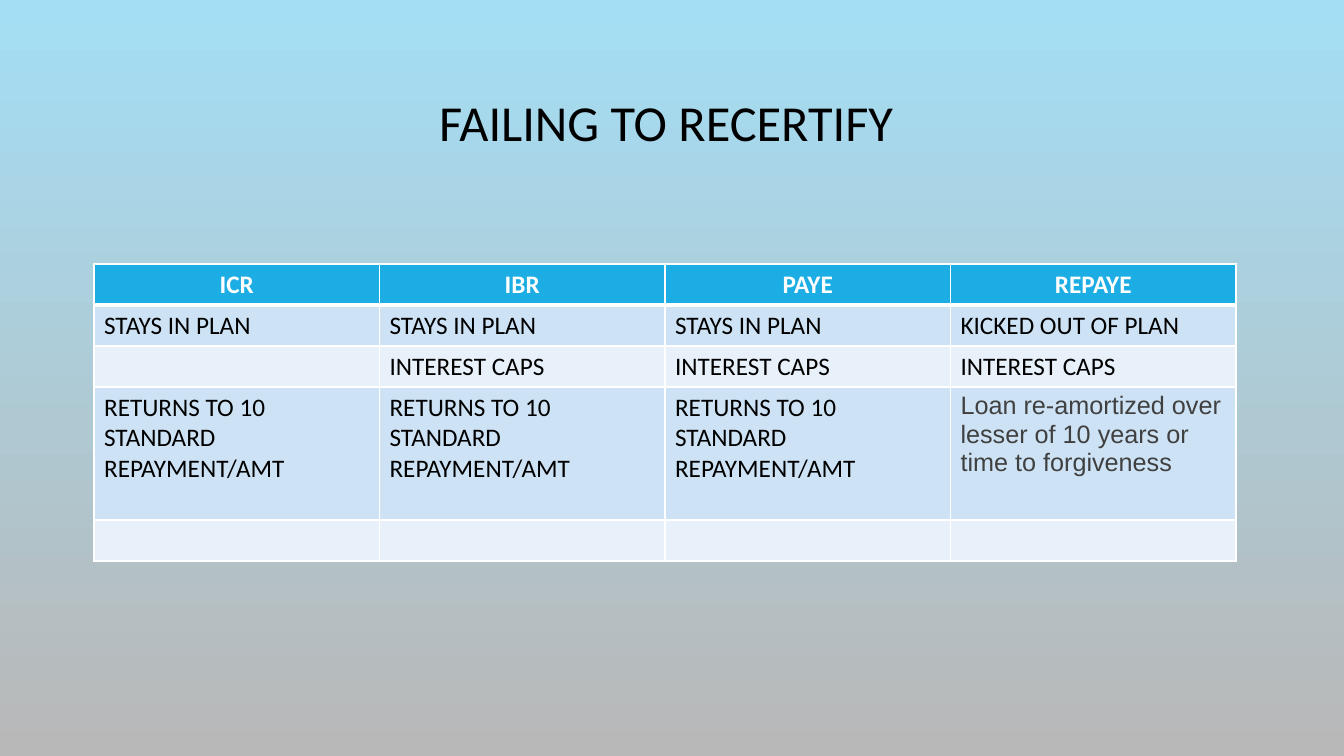
import pptx
import pptx.dml.color
import pptx.enum.text
import pptx.oxml
import pptx.oxml.ns
import pptx.util

THEME = {
    "sky": "A4DEF4", "grey": "B8B8B8", "header": "1CADE4",
    "bands": ("CDE3F5", "E8F1FA"), "white": "FFFFFF", "black": "000000",
    "note": "404040", "font": "Calibri", "note_font": "Arial",
    "title_size": 36, "cell_size": 18,
}
CENTER = pptx.enum.text.PP_ALIGN.CENTER
LEFT = pptx.enum.text.PP_ALIGN.LEFT
PX = 914400 / 100.8
rgb = pptx.dml.color.RGBColor.from_string


def px(*lengths):
    """Turn pixel lengths into EMU."""
    return [pptx.util.Emu(round(length * PX)) for length in lengths]


def write(frame, text, size=THEME["cell_size"], font=THEME["font"],
          color=THEME["black"], bold=False, align=LEFT, spacing=1.0):
    paragraph = frame.paragraphs[0]
    paragraph.alignment = align
    paragraph.line_spacing = spacing
    run = paragraph.add_run()
    run.text = text
    run.font.size = pptx.util.Pt(size)
    run.font.name = font
    run.font.bold = bold
    run.font.color.rgb = rgb(color)


deck = pptx.Presentation()
deck.slide_width, deck.slide_height = px(1344, 756)
slide = deck.slides.add_slide(deck.slide_layouts[5])

backdrop = slide.background.fill
backdrop.gradient()
backdrop.gradient_angle = 270
for stop, color in zip(backdrop.gradient_stops, ("sky", "grey")):
    stop.color.rgb = rgb(THEME[color])

title = slide.shapes.title
title.left, title.top, title.width, title.height = px(101, 69, 1142, 113)
title.text_frame.word_wrap = True
title.text_frame.vertical_anchor = pptx.enum.text.MSO_ANCHOR.MIDDLE
write(title.text_frame, "FAILING TO RECERTIFY ", size=THEME["title_size"],
      align=CENTER, spacing=0.9)

plans = ["ICR", "IBR", "PAYE", "REPAYE"]
standard = "RETURNS TO 10 STANDARD REPAYMENT/AMT"
reamortized = "Loan re-amortized over lesser of 10 years or time to forgiveness"
outcomes = [
    plans,
    ["STAYS IN PLAN"] * 3 + ["KICKED OUT OF PLAN"],
    [""] + ["INTEREST CAPS"] * 3,
    [standard] * 3 + [reamortized],
    [""] * 4,
]
row_heights = px(41, 41, 41, 133, 41)

table = slide.shapes.add_table(
    len(outcomes), len(plans), *px(94, 264, 1142, 297)).table
for row, height in zip(table.rows, row_heights):
    row.height = height

for r, outcome_row in enumerate(outcomes):
    is_header = r == 0
    for c, outcome in enumerate(outcome_row):
        cell = table.cell(r, c)
        properties = cell._tc.get_or_add_tcPr()
        for side in "LRTB":
            heavy = (is_header and side == "B") or (r == 1 and side == "T")
            border = pptx.oxml.parse_xml(
                f'<a:ln{side} {pptx.oxml.ns.nsdecls("a")} '
                f'w="{pptx.util.Pt(3 if heavy else 1)}"><a:solidFill>'
                f'<a:srgbClr val="{THEME["white"]}"/></a:solidFill></a:ln{side}>')
            properties.append(border)
        cell.fill.solid()
        fill = THEME["header"] if is_header else THEME["bands"][(r - 1) % 2]
        cell.fill.fore_color.rgb = rgb(fill)
        if is_header:
            write(cell.text_frame, outcome, color=THEME["white"], bold=True,
                  align=CENTER)
        elif outcome == reamortized:
            write(cell.text_frame, outcome, font=THEME["note_font"],
                  color=THEME["note"])
        elif outcome:
            write(cell.text_frame, outcome)

deck.save("out.pptx")
